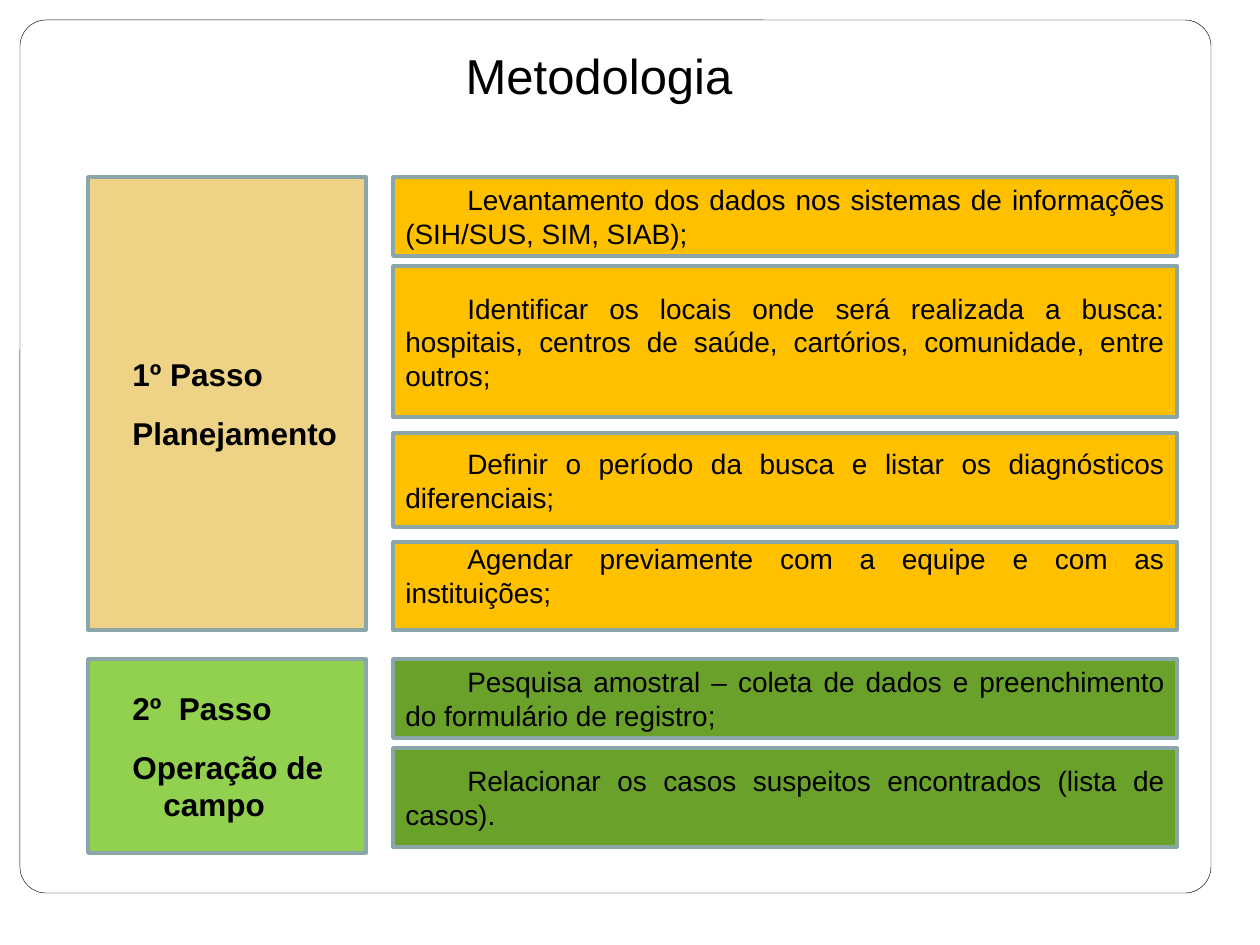
from pptx import Presentation
from pptx.dml.color import RGBColor
from pptx.enum.shapes import MSO_SHAPE
from pptx.enum.text import MSO_ANCHOR, PP_ALIGN
from pptx.util import Emu, Pt

BLACK = RGBColor(0x00, 0x00, 0x00)
BORDER = RGBColor(0x8A, 0xA6, 0xA8)
SAND = RGBColor(0xEE, 0xD3, 0x86)
AMBER = RGBColor(0xFF, 0xC0, 0x00)
LIME = RGBColor(0x92, 0xD0, 0x50)
GREEN = RGBColor(0x69, 0xA1, 0x2B)

STEP_LEFT, STEP_WIDTH = 88, 278
TASK_LEFT, TASK_WIDTH = 393, 784

STEPS = [
    (177, 453, SAND, ["1º Passo", "Planejamento"]),
    (659, 194, LIME, ["2º  Passo", "Operação de campo"]),
]
TASKS = [
    (177, 79, AMBER, "Levantamento dos dados nos sistemas de informações (SIH/SUS, SIM, SIAB);"),
    (266, 151, AMBER, "Identificar os locais onde será realizada a busca: hospitais, "
                      "centros de saúde, cartórios, comunidade, entre outros;"),
    (433, 94, AMBER, "Definir o período da busca e listar os diagnósticos diferenciais;"),
    (542, 88, AMBER, "Agendar previamente com a equipe e com as instituições;"),
    (659, 79, GREEN, "Pesquisa amostral – coleta de dados e preenchimento do formulário de registro;"),
    (748, 99, GREEN, "Relacionar os casos suspeitos encontrados (lista de casos)."),
]
RAISED_TASK = 3


def px(length):
    return Emu(round(length * 914400 / 126))


def write(para, text, size=16, bold=False, align=PP_ALIGN.LEFT, margin=0, indent=0, after=0):
    properties = para._p.get_or_add_pPr()
    properties.set("marL", str(px(margin)))
    properties.set("indent", str(px(indent)))
    para.alignment = align
    para.space_before = Pt(0)
    para.space_after = Pt(after)
    span = para.add_run()
    span.text = text
    span.font.name = "Arial"
    span.font.size = Pt(size)
    span.font.bold = bold
    span.font.color.rgb = BLACK


class SlideBuilder:
    def __init__(self, page):
        self.page = page

    def title(self, text, left, top, width, height):
        box = self.page.shapes.title
        box.left, box.top, box.width, box.height = map(px, (left, top, width, height))
        box.text_frame.word_wrap = True
        box.text_frame.vertical_anchor = MSO_ANCHOR.MIDDLE
        write(box.text_frame.paragraphs[0], text, size=28, align=PP_ALIGN.CENTER)

    def shape(self, kind, left, top, width, height, line, weight, fill=None):
        box = self.page.shapes.add_shape(kind, *map(px, (left, top, width, height)))
        box.shadow.inherit = False
        box.line.color.rgb = line
        box.line.width = Pt(weight)
        if fill is None:
            box.fill.background()
        else:
            box.fill.solid()
            box.fill.fore_color.rgb = fill
        return box

    def frame(self, left, top, width, height):
        box = self.shape(MSO_SHAPE.ROUNDED_RECTANGLE, left, top, width, height, BLACK, 0.25)
        box.adjustments[0] = 0.03

    def panel(self, left, top, width, height, fill):
        box = self.shape(MSO_SHAPE.RECTANGLE, left, top, width, height, BORDER, 2, fill)
        box.text_frame.word_wrap = True
        box.text_frame.vertical_anchor = MSO_ANCHOR.MIDDLE
        return box.text_frame

    def step(self, top, height, fill, lines):
        text_frame = self.panel(STEP_LEFT, top, STEP_WIDTH, height, fill)
        heading, name = text_frame.paragraphs[0], text_frame.add_paragraph()
        write(heading, lines[0], size=18, bold=True, margin=63, indent=-31, after=12)
        write(name, lines[1], size=18, bold=True, margin=63, indent=-31)

    def task(self, top, height, fill, text, raised=False):
        text_frame = self.panel(TASK_LEFT, top, TASK_WIDTH, height, fill)
        if raised:
            text_frame.margin_bottom = px(27)
        write(text_frame.paragraphs[0], text, align=PP_ALIGN.JUSTIFY, indent=62)


def main():
    deck = Presentation()
    deck.slide_width, deck.slide_height = px(1260), px(945)
    builder = SlideBuilder(deck.slides.add_slide(deck.slide_layouts[5]))
    builder.frame(20, 20, 1191, 873)
    builder.title("Metodologia", 98, 39, 1002, 72)
    for step in STEPS:
        builder.step(*step)
    for index, task in enumerate(TASKS):
        builder.task(*task, raised=index == RAISED_TASK)
    deck.save("out.pptx")


if __name__ == "__main__":
    main()
